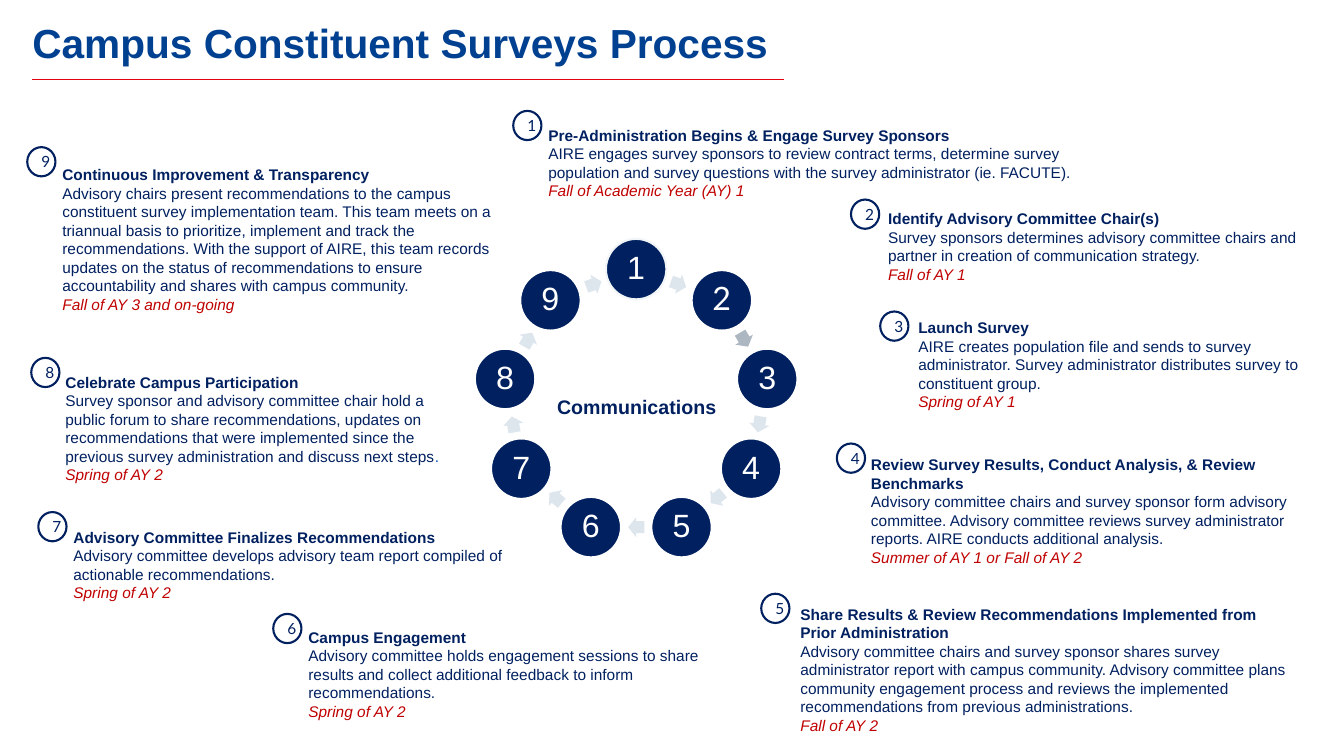
"""Build the campus constituent surveys process slide."""
from dataclasses import dataclass
from math import cos, radians, sin
from typing import Any

from lxml.etree import SubElement
from pptx import Presentation
from pptx.dml.color import RGBColor
from pptx.enum.shapes import MSO_CONNECTOR as Connector, MSO_SHAPE as Shape
from pptx.enum.text import MSO_ANCHOR as Anchor, MSO_AUTO_SIZE as Fit, PP_ALIGN as Align
from pptx.oxml.ns import qn
from pptx.util import Pt

PX = 9144
NAVY = RGBColor(0x00, 0x20, 0x60)
TITLE_BLUE = RGBColor(0x00, 0x40, 0x91)
BRIGHT_BLUE = RGBColor(0x00, 0x51, 0xBA)
DATE_RED = RGBColor(0xC0, 0x00, 0x00)
RULE_RED = RGBColor(0xE8, 0x00, 0x0D)
WHITE = RGBColor(0xFF, 0xFF, 0xFF)
MIST = RGBColor(0xF2, 0xF5, 0xF8)
PALE_ARROW = RGBColor(0xDD, 0xE5, 0xED)
DARK_ARROW = RGBColor(0xAC, 0xB7, 0xC1)

RING_X, RING_Y, RING_RADIUS = 631, 399, 132
NODE_SIZE = 60
ARROW_WIDTH, ARROW_HEIGHT = 16, 20

STEPS = [
    ((509, 110), (534, 120, 583, 84), "Pre-Administration Begins & Engage Survey Sponsors",
     "AIRE engages survey sponsors to review contract terms, determine survey population and "
     "survey questions with the survey administrator (ie. FACUTE).",
     "Fall of Academic Year (AY) 1"),
    ((844, 198), (871, 203, 447, 84), "Identify Advisory Committee Chair(s)",
     "Survey sponsors determines advisory committee chairs and partner in creation of "
     "communication strategy.",
     "Fall of AY 1"),
    ((873, 309), (901, 311, 433, 102), "Launch Survey",
     "AIRE creates population file and sends to survey administrator. Survey administrator "
     "distributes survey to constituent group.",
     "Spring of AY 1"),
    ((830, 440), (854, 447, 475, 120),
     "Review Survey Results, Conduct Analysis, & Review Benchmarks",
     "Advisory committee chairs and survey sponsor form advisory committee. Advisory committee "
     "reviews survey administrator reports. AIRE conducts additional analysis.",
     "Summer of AY 1 or Fall of AY 2"),
    ((755, 589), (784, 595, 503, 142),
     "Share Results & Review Recommendations Implemented from Prior Administration",
     "Advisory committee chairs and survey sponsor shares survey administrator report with "
     "campus community. Advisory committee plans community engagement process and reviews the "
     "implemented recommendations from previous administrations.",
     "Fall of AY 2"),
    ((271, 609), (296, 618, 443, 102), "Campus Engagement",
     "Advisory committee holds engagement sessions to share results and collect additional "
     "feedback to inform recommendations.",
     "Spring of AY 2"),
    ((38, 508), (63, 519, 467, 84), "Advisory Committee Finalizes Recommendations",
     "Advisory committee develops advisory team report compiled of actionable recommendations.",
     "Spring of AY 2"),
    ((31, 355), (55, 365, 415, 122), "Celebrate Campus Participation",
     "Survey sponsor and advisory committee chair hold a public forum to share recommendations, "
     "updates on recommendations that were implemented since the previous survey administration "
     "and discuss next steps",
     "Spring of AY 2"),
    ((27, 146), (52, 159, 449, 157), "Continuous Improvement & Transparency",
     "Advisory chairs present recommendations to the campus constituent survey implementation "
     "team. This team meets on a triannual basis to prioritize, implement and track the "
     "recommendations. With the support of AIRE, this team records updates on the status of "
     "recommendations to ensure accountability and shares with campus community.",
     "Fall of AY 3 and on-going"),
]


def add_span(para, text, size=11, color=NAVY, font="Arial", bold=False, italic=False,
             align=Align.LEFT):
    """Add formatted text to a paragraph."""
    para.alignment = align
    span = para.add_run()
    span.text = text
    span.font.name = font
    span.font.size = Pt(size)
    span.font.bold = bold
    span.font.italic = italic
    span.font.color.rgb = color


def ring_point(radius, angle):
    """Return the point at a clockwise angle from the top of the ring."""
    turn = radians(angle)
    return round(RING_X + radius * sin(turn)), round(RING_Y - radius * cos(turn))


@dataclass
class SlideBuilder:
    """Draw styled elements on the current slide."""
    slide: Any
    font: str = "Arial"
    digit_font: str = "Lato"

    def title(self, text, left, top, width, height):
        """Place and format the title placeholder."""
        box = self.slide.shapes.title
        box.left, box.top, box.width, box.height = (n * PX for n in (left, top, width, height))
        frame = box.text_frame
        frame.auto_size = Fit.NONE
        frame.vertical_anchor = Anchor.TOP
        add_span(frame.paragraphs[0], text, size=29, color=TITLE_BLUE, font=self.font, bold=True)

    def rule(self, left, right, y):
        """Draw the line under the title."""
        line = self.slide.shapes.add_connector(
            Connector.STRAIGHT, left * PX, y * PX, right * PX, y * PX)
        line.line.color.rgb = RULE_RED
        line.line.width = Pt(1)
        SubElement(line._element.spPr, qn("a:effectLst"))

    def shape(self, kind, left, top, width, height, fill=None, outline=None, weight=0.75):
        """Draw a preset shape without a shadow."""
        box = self.slide.shapes.add_shape(kind, *(n * PX for n in (left, top, width, height)))
        box.shadow.inherit = False
        if fill is None:
            box.fill.background()
        else:
            box.fill.solid()
            box.fill.fore_color.rgb = fill
        if outline is None:
            box.line.fill.background()
        else:
            box.line.color.rgb = outline
            box.line.width = Pt(weight)
        return box

    def node(self, number, angle):
        """Draw a numbered circle on the ring."""
        x, y = ring_point(RING_RADIUS, angle)
        circle = self.shape(Shape.OVAL, x - NODE_SIZE // 2, y - NODE_SIZE // 2, NODE_SIZE,
                            NODE_SIZE, NAVY, MIST if number == 1 else WHITE, 1.5)
        frame = circle.text_frame
        frame.margin_left = frame.margin_right = frame.margin_top = frame.margin_bottom = 3 * PX
        para = frame.paragraphs[0]
        para.line_spacing = 0.9
        add_span(para, str(number), size=23, color=WHITE, align=Align.CENTER,
                 font=self.digit_font if number == 2 else self.font)

    def arrow(self, angle, color):
        """Draw an arrow halfway between two ring nodes."""
        x, y = ring_point(RING_RADIUS * cos(radians(20)), angle)
        arrow = self.shape(Shape.RIGHT_ARROW, x - ARROW_WIDTH // 2, y - ARROW_HEIGHT // 2,
                           ARROW_WIDTH, ARROW_HEIGHT, color)
        arrow.adjustments[0] = 0.6
        arrow.adjustments[1] = 0.5
        arrow.rotation = angle

    def note(self, area, heading, body, timing, fill):
        """Write a step's heading, description and timing."""
        box = self.shape(Shape.RECTANGLE, *area, fill, WHITE)
        frame = box.text_frame
        frame.word_wrap = True
        frame.auto_size = Fit.SHAPE_TO_FIT_TEXT
        frame.vertical_anchor = Anchor.TOP
        add_span(frame.paragraphs[0], heading, font=self.font, bold=True)
        add_span(frame.add_paragraph(), body, font=self.font)
        add_span(frame.add_paragraph(), timing, font=self.font, color=DATE_RED, italic=True)
        return box

    def badge(self, number, left, top):
        """Draw the small numbered circle beside a note."""
        circle = self.shape(Shape.OVAL, left, top, 28, 29, None, NAVY, 1.5)
        add_span(circle.text_frame.paragraphs[0], str(number), font=self.digit_font,
                 align=Align.CENTER)

    def label(self, text, left, top, width, height):
        """Write the label in the middle of the ring."""
        box = self.slide.shapes.add_textbox(*(n * PX for n in (left, top, width, height)))
        box.text_frame.word_wrap = True
        add_span(box.text_frame.paragraphs[0], text, size=14, font=self.font, bold=True,
                 align=Align.CENTER)


def main():
    """Build and save the deck."""
    deck = Presentation()
    deck.slide_width, deck.slide_height = 1333 * PX, 750 * PX
    page = SlideBuilder(deck.slides.add_slide(deck.slide_layouts[5]))
    page.title("Campus Constituent Surveys Process", 22, 13, 901, 58)
    page.rule(32, 778, 79)
    step_angle = 360 // len(STEPS)
    for number, (spot, area, heading, body, timing) in enumerate(STEPS, 1):
        box = page.note(area, heading, body, timing, None if number == 6 else WHITE)
        if number == 8:
            add_span(box.text_frame.paragraphs[1], ".", color=BRIGHT_BLUE)
        page.badge(number, *spot)
    for number in range(1, len(STEPS) + 1):
        angle = (number - 1) * step_angle
        page.node(number, angle)
        page.arrow(angle + step_angle // 2, DARK_ARROW if number == 2 else PALE_ARROW)
    page.label("Communications", 542, 387, 179, 33)
    deck.save("out.pptx")


if __name__ == "__main__":
    main()
